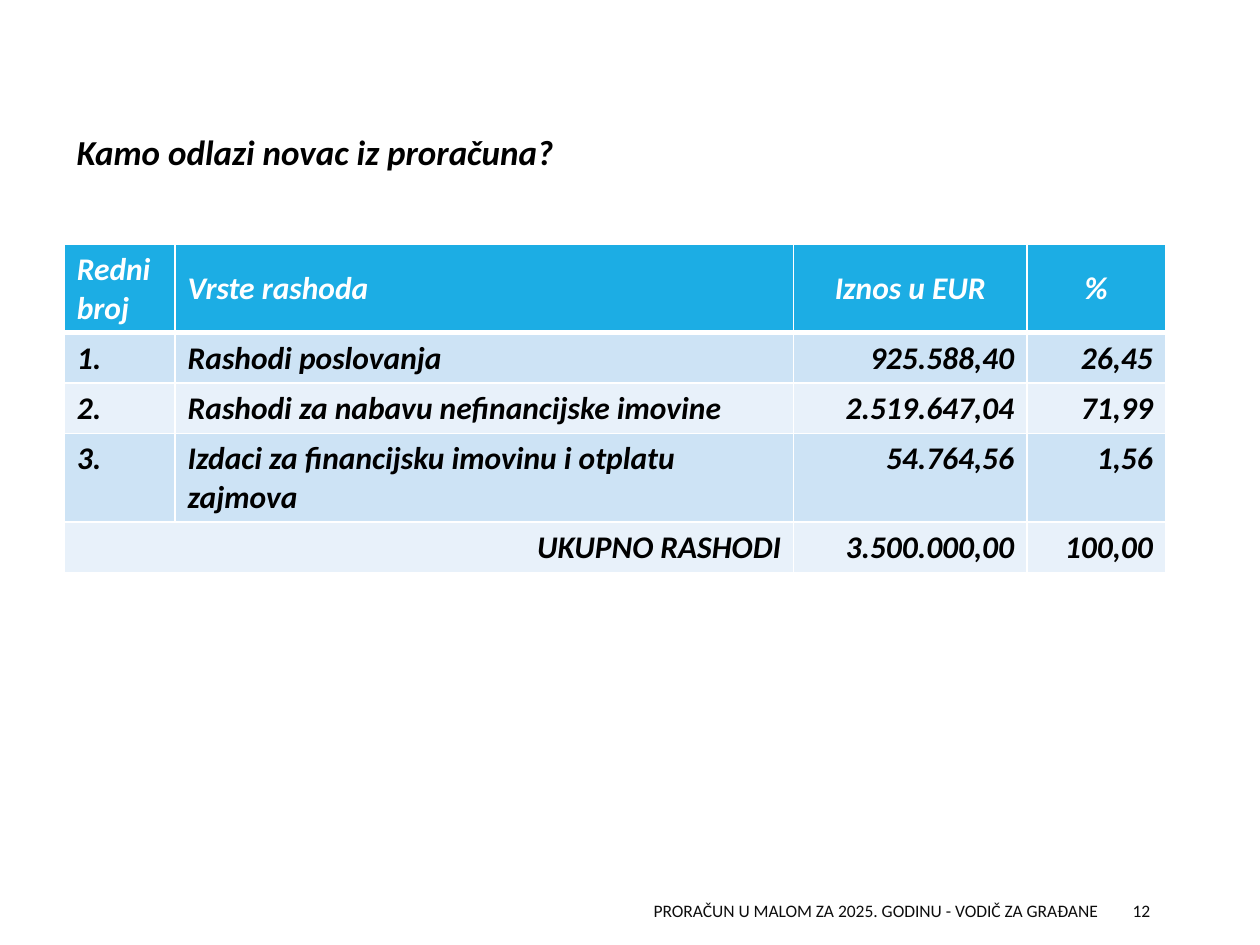
from lxml.etree import SubElement
from pptx import Presentation
from pptx.dml.color import RGBColor
from pptx.enum.text import MSO_ANCHOR, PP_ALIGN
from pptx.oxml import parse_xml
from pptx.oxml.ns import nsdecls, qn
from pptx.util import Inches, Pt

COLORS = {
    "heading": "000000",
    "footer": "0D0D0D",
    "header_fill": "1CADE4",
    "odd_fill": "CDE3F5",
    "even_fill": "E8F1FA",
    "white": "FFFFFF",
}
FONT = "Calibri"
HEADERS = ["Redni broj", "Vrste rashoda", "Iznos u EUR", "%"]
EXPENSES = [
    ["1.", "Rashodi poslovanja", "925.588,40", "26,45"],
    ["2.", "Rashodi za nabavu nefinancijske imovine", "2.519.647,04", "71,99"],
    ["3.", "Izdaci za financijsku imovinu i otplatu zajmova", "54.764,56", "1,56"],
    ["UKUPNO RASHODI", "", "3.500.000,00", "100,00"],
]
COLUMN_WIDTHS = [0.88, 4.91, 1.85, 1.1]
ROW_HEIGHTS = [0.69, 0.4, 0.4, 0.7, 0.4]


def write(frame, text, size, color, align=PP_ALIGN.LEFT, emphasis=False):
    paragraph = frame.paragraphs[0]
    paragraph.alignment = align
    run = paragraph.add_run()
    run.text = text
    run.font.name = FONT
    run.font.size = Pt(size)
    run.font.bold = run.font.italic = emphasis
    run.font.color.rgb = RGBColor.from_string(COLORS[color])


def add_text(slide, box, text, size, color, anchor=MSO_ANCHOR.TOP, **style):
    frame = slide.shapes.add_textbox(*map(Inches, box)).text_frame
    frame.word_wrap = True
    frame.vertical_anchor = anchor
    write(frame, text, size, color, **style)


def set_borders(cell, top, bottom):
    properties = cell._tc.get_or_add_tcPr()
    widths = {"lnL": 1, "lnR": 1, "lnT": top, "lnB": bottom}
    for position, (side, width) in enumerate(widths.items()):
        border = parse_xml(f'<a:{side} {nsdecls("a")} w="{Pt(width)}"/>')
        fill = SubElement(border, qn("a:solidFill"))
        SubElement(fill, qn("a:srgbClr"), val=COLORS["white"])
        properties.insert(position, border)


def style_cell(cell, row, fill):
    cell.fill.solid()
    cell.fill.fore_color.rgb = RGBColor.from_string(COLORS[fill])
    set_borders(cell, top=3 if row == 1 else 1, bottom=3 if row == 0 else 1)


def add_expense_table(slide, box):
    rows = [HEADERS] + EXPENSES
    table = slide.shapes.add_table(len(rows), len(HEADERS), *map(Inches, box)).table
    for column, width in zip(table.columns, COLUMN_WIDTHS):
        column.width = Inches(width)
    for table_row, height in zip(table.rows, ROW_HEIGHTS):
        table_row.height = Inches(height)

    total_row = len(rows) - 1
    table.cell(total_row, 0).merge(table.cell(total_row, 1))
    for row, texts in enumerate(rows):
        is_header = row == 0
        fill = "header_fill" if is_header else "odd_fill" if row % 2 else "even_fill"
        for column, text in enumerate(texts):
            cell = table.cell(row, column)
            style_cell(cell, row, fill)
            if not text:
                continue
            if is_header and column > 0:
                cell.vertical_anchor = MSO_ANCHOR.MIDDLE
            align = PP_ALIGN.LEFT
            if column >= 2 or row == total_row:
                align = PP_ALIGN.CENTER if is_header else PP_ALIGN.RIGHT
            color = "white" if is_header else "heading"
            write(cell.text_frame, text, 18, color, align, emphasis=True)


def add_footer(slide, box):
    left, top, width, height = box
    number_width = 0.8
    title_width = 4.84
    add_text(slide, (left, top, title_width, height),
             "PRORAČUN U MALOM ZA 2025. GODINU - VODIČ ZA GRAĐANE",
             10, "footer", MSO_ANCHOR.MIDDLE, align=PP_ALIGN.RIGHT)
    add_text(slide, (left + width - number_width, top, number_width, height),
             "12", 10, "footer", MSO_ANCHOR.MIDDLE)


def main():
    presentation = Presentation()
    presentation.slide_width = Inches(10)
    presentation.slide_height = Inches(7.5)
    slide = presentation.slides.add_slide(presentation.slide_layouts[6])
    add_footer(slide, (3.97, 7.08, 5.72, 0.3))
    add_text(slide, (0.51, 0.99, 4.72, 0.44), "Kamo odlazi novac iz proračuna?",
             20, "heading", emphasis=True)
    add_expense_table(slide, (0.51, 1.94, sum(COLUMN_WIDTHS), sum(ROW_HEIGHTS)))
    presentation.save("out.pptx")


if __name__ == "__main__":
    main()
